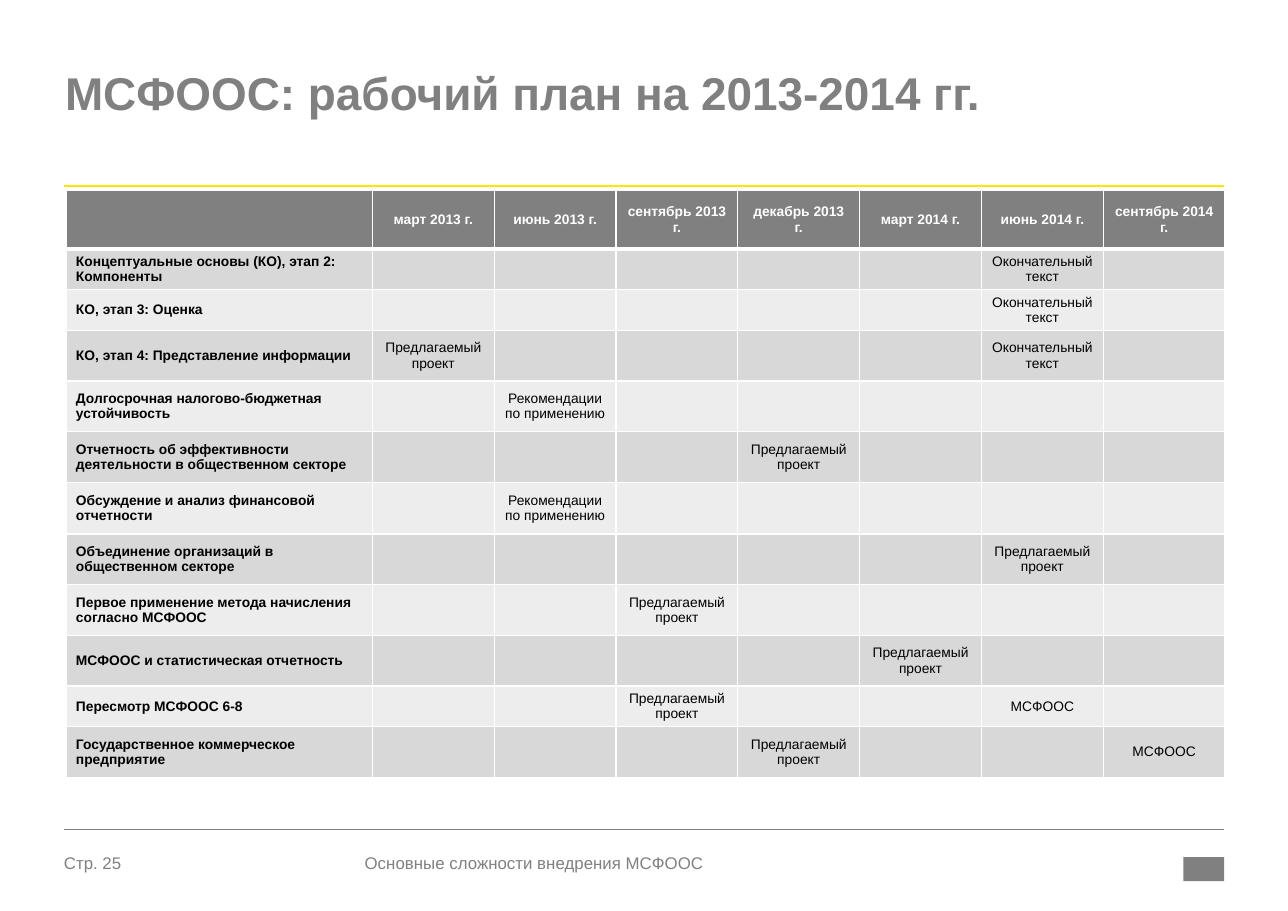
from dataclasses import dataclass

from lxml.etree import SubElement
from pptx import Presentation
from pptx.dml.color import RGBColor
from pptx.enum.shapes import MSO_CONNECTOR, MSO_SHAPE
from pptx.enum.text import MSO_ANCHOR, PP_ALIGN
from pptx.oxml.ns import qn
from pptx.util import Inches, Pt


@dataclass(frozen=True)
class Theme:
    font: str = "Arial"
    gray: str = "808080"
    gold: str = "FFE600"
    white: str = "FFFFFF"
    black: str = "000000"
    bands: tuple = ("D8D8D8", "EDEDED")
    title: int = 30
    foot: int = 11
    cell: int = 9


THEME = Theme()

TITLE = "МСФООС: рабочий план на 2013-2014 гг."
PAGE = "Стр. 25"
FOOTER = "Основные сложности внедрения МСФООС"

DATES = ["март 2013 г.", "июнь 2013 г.", "сентябрь 2013 г.", "декабрь 2013 г.",
         "март 2014 г.", "июнь 2014 г.", "сентябрь 2014 г."]
DRAFT = "Предлагаемый проект"
FINAL = "Окончательный текст"
GUIDE = "Рекомендации по применению"
IPSAS = "МСФООС"

# Project, row height, {date column: output}
PLAN = [
    ("Концептуальные основы (КО), этап 2: Компоненты", 0.37, {6: FINAL}),
    ("КО, этап 3: Оценка", 0.37, {6: FINAL}),
    ("КО, этап 4: Представление информации", 0.46, {1: DRAFT, 6: FINAL}),
    ("Долгосрочная налогово-бюджетная устойчивость", 0.46, {2: GUIDE}),
    ("Отчетность об эффективности деятельности в общественном секторе", 0.46, {4: DRAFT}),
    ("Обсуждение и анализ финансовой отчетности", 0.47, {2: GUIDE}),
    ("Объединение организаций в общественном секторе", 0.46, {6: DRAFT}),
    ("Первое применение метода начисления согласно МСФООС", 0.46, {3: DRAFT}),
    ("МСФООС и статистическая отчетность", 0.46, {5: DRAFT}),
    ("Пересмотр МСФООС 6-8", 0.37, {3: DRAFT, 6: IPSAS}),
    ("Государственное коммерческое предприятие", 0.46, {4: DRAFT, 7: IPSAS}),
]

LEFT, RIGHT = 0.58, 11.11
WIDTH = 10.52
NAME_W = 2.78
HEAD_H = 0.53


def style(para, size, color, bold=False):
    for run in para.runs:
        run.font.name = THEME.font
        run.font.size = Pt(size)
        run.font.bold = bold
        run.font.color.rgb = RGBColor.from_string(color)


def add_text(slide, text, box, size, bold=False):
    frame = slide.shapes.add_textbox(*map(Inches, box)).text_frame
    frame.word_wrap = True
    frame.margin_left = frame.margin_right = 0
    frame.margin_top = frame.margin_bottom = 0
    frame.text = text
    para = frame.paragraphs[0]
    style(para, size, THEME.gray, bold)
    return para


def add_rule(slide, top, color, width):
    rule = slide.shapes.add_connector(
        MSO_CONNECTOR.STRAIGHT, *map(Inches, (LEFT, top, RIGHT, top)))
    rule.line.color.rgb = RGBColor.from_string(color)
    rule.line.width = Pt(width)
    SubElement(rule.element.spPr, qn("a:effectLst"))


def add_edges(cell, widths):
    """Draw white borders; widths are points for left, right, top, bottom."""
    props = cell._tc.get_or_add_tcPr()
    for side, width in zip("LRTB", widths):
        edge = SubElement(props, qn(f"a:ln{side}"), w=str(Pt(width)))
        fill = SubElement(edge, qn("a:solidFill"))
        SubElement(fill, qn("a:srgbClr"), val=THEME.white)


def fill_cell(cell, text, row, col):
    head = row == 0
    add_edges(cell, (1, 1, 3 if row == 1 else 1, 3 if head else 1))
    back = THEME.gray if head else THEME.bands[(row - 1) % 2]
    cell.fill.solid()
    cell.fill.fore_color.rgb = RGBColor.from_string(back)
    cell.margin_left = cell.margin_right = Inches(0.09)
    cell.margin_top = cell.margin_bottom = 0
    cell.vertical_anchor = MSO_ANCHOR.MIDDLE
    para = cell.text_frame.paragraphs[0]
    para.font.size = Pt(THEME.cell)
    if text:
        para.text = text
        para.alignment = PP_ALIGN.CENTER if col else PP_ALIGN.LEFT
        style(para, THEME.cell, THEME.white if head else THEME.black, head or col == 0)


def add_plan(slide):
    rows = [["", *DATES]]
    rows += [[name, *(marks.get(col, "") for col in range(1, len(DATES) + 1))]
             for name, _, marks in PLAN]
    highs = [HEAD_H, *(high for _, high, _ in PLAN)]
    wides = [NAME_W] + [(WIDTH - NAME_W) / len(DATES)] * len(DATES)
    table = slide.shapes.add_table(
        len(rows), len(wides), *map(Inches, (0.6, 1.73, WIDTH, sum(highs)))).table
    table.horz_banding = False
    for column, wide in zip(table.columns, wides):
        column.width = Inches(wide)
    for r, (texts, high) in enumerate(zip(rows, highs)):
        table.rows[r].height = Inches(high)
        for c, text in enumerate(texts):
            fill_cell(table.cell(r, c), text, r, c)


def add_badge(slide):
    badge = slide.shapes.add_shape(
        MSO_SHAPE.RECTANGLE, *map(Inches, (10.74, 7.78, 0.37, 0.22)))
    badge.shadow.inherit = False
    badge.fill.solid()
    badge.fill.fore_color.rgb = RGBColor.from_string(THEME.gray)
    badge.line.fill.background()


def main():
    deck = Presentation()
    deck.slide_width, deck.slide_height = Inches(11.69), Inches(8.27)
    slide = deck.slides.add_slide(deck.slide_layouts[6])
    add_text(slide, PAGE, (LEFT, 7.74, 0.92, 0.24), THEME.foot)
    add_badge(slide)
    add_rule(slide, 1.69, THEME.gold, 1.5)
    add_rule(slide, 7.53, THEME.gray, 0.25)
    title = add_text(slide, TITLE, (0.59, 0.66, WIDTH, 1.04), THEME.title, True)
    title.line_spacing = 0.85
    add_plan(slide)
    add_text(slide, FOOTER, (3.31, 7.74, 4.39, 0.24), THEME.foot)
    deck.save("out.pptx")


if __name__ == "__main__":
    main()
